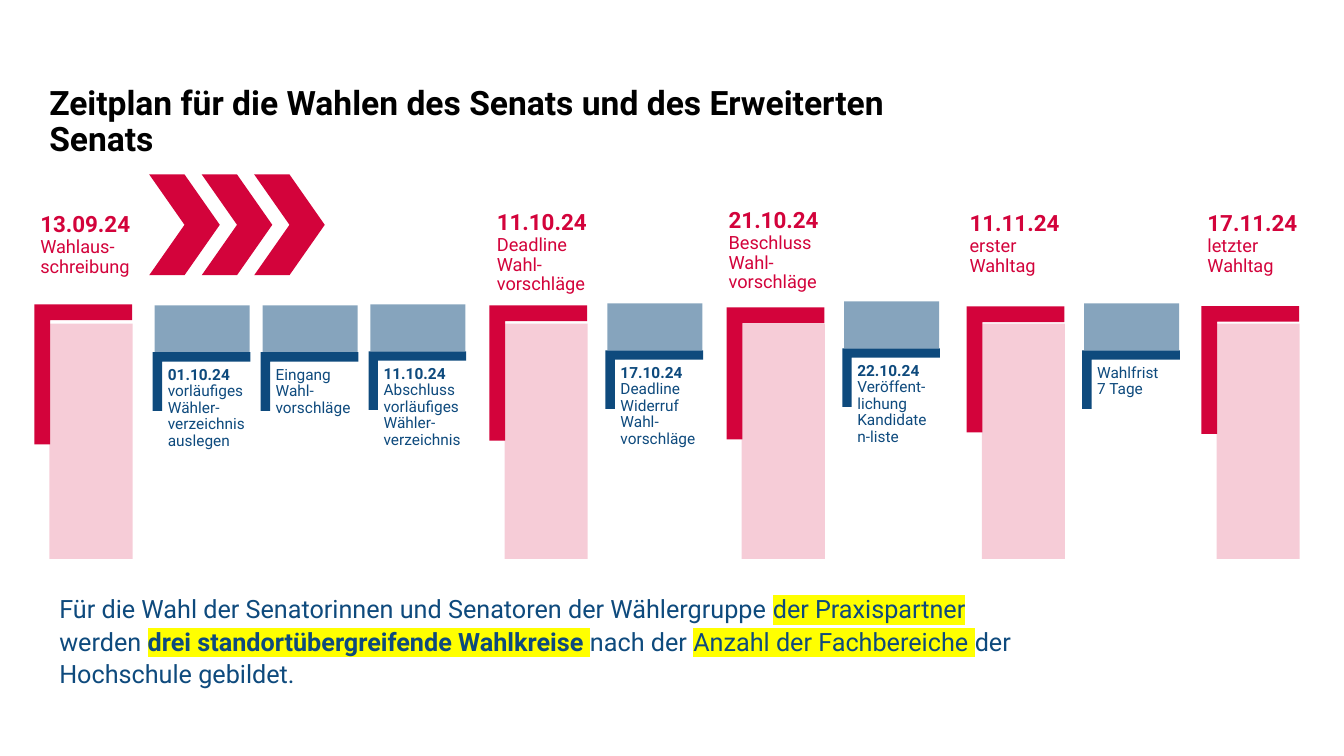
from lxml import etree
from pptx import Presentation
from pptx.dml.color import RGBColor
from pptx.enum.shapes import MSO_SHAPE
from pptx.enum.text import MSO_ANCHOR, MSO_AUTO_SIZE, PP_ALIGN
from pptx.oxml.ns import qn
from pptx.util import Pt

RECT, CORNER, CHEVRON = MSO_SHAPE.RECTANGLE, MSO_SHAPE.CORNER, MSO_SHAPE.CHEVRON
TOP, NO_FIT, LEFT = MSO_ANCHOR.TOP, MSO_AUTO_SIZE.NONE, PP_ALIGN.LEFT
RED = RGBColor(0xD3, 0x03, 0x3B)
BLUE = RGBColor(0x0E, 0x4A, 0x7D)
BLACK = RGBColor(0, 0, 0)
YELLOW = "FFFF00"
FONT = "Roboto"

TITLE = "Zeitplan für die Wahlen des Senats und des Erweiterten Senats"

# date, text, bracket (left, top, height), label (left, top, width, height)
MILESTONES = [
    ("13.09.24 ", "Wahlaus-\nschreibung", (24.5, 217.4, 100), (23.8, 147.6, 77, 113.8)),
    ("11.10.24 ", "Deadline Wahl-vorschläge", (349.6, 218.2, 96.5), (349.9, 146.2, 82.8, 98.6)),
    ("21.10.24 ", "Beschluss Wahl-vorschläge", (519, 219.6, 94.3), (515.5, 144.7, 76.3, 54.7)),
    ("11.11.24 ", "erster Wahltag", (690.5, 218.9, 90), (687.6, 146.9, 84.2, 54.7)),
    ("17.11.24 ", "letzter Wahltag", (858.2, 218.6, 91.4), (857.5, 146.9, 74.2, 93.6)),
]
# date, text, bracket left, bracket top
STEPS = [
    ("01.10.24 ", "vorläufiges Wähler-verzeichnis auslegen", 109.1, 251.6),
    ("", "Eingang Wahl-vorschläge", 186.1, 251.6),
    ("11.10.24 ", "Abschluss vorläufiges Wähler-verzeichnis", 263.2, 250.9),
    ("17.10.24 ", "Deadline Widerruf Wahl-vorschläge", 432.4, 250.2),
    ("22.10.24 ", "Veröffent-lichung Kandidaten-liste", 601.6, 248.8),
    ("", "Wahlfrist \n7 Tage", 772.9, 250.2),
]
# text, bold, highlighted
NOTE = [
    ("Für die Wahl der Senatorinnen und Senatoren der Wählergruppe ", False, False),
    ("der Praxispartner ", False, True),
    ("werden ", False, False),
    ("drei standortübergreifende Wahlkreise ", True, True),
    ("nach der ", False, False),
    ("Anzahl der Fachbereiche ", False, True),
    ("der Hochschule gebildet.", False, False),
]
BRACKET_W = 69.8
BAR_TOP = 231.2
CHEVRON_X, CHEVRON_STEP = 106.6, 37.5


def style(r, size, color, bold=False):
    r.font.name, r.font.size, r.font.bold = FONT, Pt(size), bold
    r.font.color.rgb = color


def add_text(p, text, size, color, bold=False, highlight=False):
    for i, line in enumerate(text.split("\n")):
        if i:
            p.add_line_break()
        r = p.add_run()
        r.text = line
        style(r, size, color, bold)
        if highlight:
            mark = etree.Element(qn("a:highlight"))
            etree.SubElement(mark, qn("a:srgbClr"), val=YELLOW)
            r.font._element.find(qn("a:solidFill")).addnext(mark)


def add_box(s, x, y, w, h, inset_x, inset_y, spacing):
    """Add an empty wrapping text box and return its first paragraph."""
    tf = s.shapes.add_textbox(Pt(x), Pt(y), Pt(w), Pt(h)).text_frame
    tf.word_wrap = True
    tf.margin_left = tf.margin_right = Pt(inset_x)
    tf.margin_top = tf.margin_bottom = Pt(inset_y)
    p = tf.paragraphs[0]
    p.line_spacing = spacing
    return p


def add_label(s, date, text, box, inset, date_size, size, color):
    p = add_box(s, *box, inset, inset, 0.9)
    if date:
        add_text(p, date, date_size, color, bold=True)
    add_text(p, text, size, color)


def add_filled(s, kind, x, y, w, h, color, alpha=100):
    sp = s.shapes.add_shape(kind, Pt(x), Pt(y), Pt(w), Pt(h))
    sp.shadow.inherit = False
    sp.line.fill.background()
    sp.fill.solid()
    sp.fill.fore_color.rgb = color
    if alpha < 100:
        clr = sp._element.spPr.find(qn("a:solidFill"))[0]
        etree.SubElement(clr, qn("a:alpha"), val=str(alpha * 1000))
    return sp


def add_bracket(s, x, y, h, color):
    """Turn an L shape by 90° so that it covers x, y, BRACKET_W, h."""
    shift = (BRACKET_W - h) / 2
    sp = add_filled(s, CORNER, x + shift, y - shift, h, BRACKET_W, color)
    sp.rotation = 90
    sp.adjustments[0] = sp.adjustments[1] = 0.161


def main():
    prs = Presentation()
    prs.slide_width, prs.slide_height = Pt(960), Pt(540)
    s = prs.slides.add_slide(prs.slide_layouts[5])

    title = s.shapes.title
    title.left, title.top, title.width, title.height = Pt(28), Pt(58.3), Pt(680.4), Pt(63.4)
    tf = title.text_frame
    tf.text = TITLE
    tf.word_wrap, tf.auto_size, tf.vertical_anchor = True, NO_FIT, TOP
    p = tf.paragraphs[0]
    p.alignment, p.line_spacing = LEFT, 0.9
    style(p.runs[0], 24, BLACK, bold=True)

    for date, text, (x, y, h), label in MILESTONES:
        add_bracket(s, x, y, h, RED)
        add_label(s, date, text, label, 5, 16, 13, RED)
        add_filled(s, RECT, x + 10.8, BAR_TOP, 59.4, 168, RED, 20)

    for date, text, x, y in STEPS:
        add_bracket(s, x, y, 41.8, BLUE)
        add_label(s, date, text, (x + 7.2, y + 6.8, 62.6, 54.7), 3.6, 11, 11, BLUE)
        add_filled(s, RECT, x + 1.4, y - 33.5, 67.9, 33.3, BLUE, 50)

    for i in range(3):
        add_filled(s, CHEVRON, CHEVRON_X + i * CHEVRON_STEP, 124.6, 50.4, 72, RED)

    p = add_box(s, 35.3, 419, 708.5, 76.3, 7.2, 3.6, 1.07)
    for text, bold, highlight in NOTE:
        add_text(p, text, 18, BLUE, bold, highlight)

    prs.save("out.pptx")


if __name__ == "__main__":
    main()
